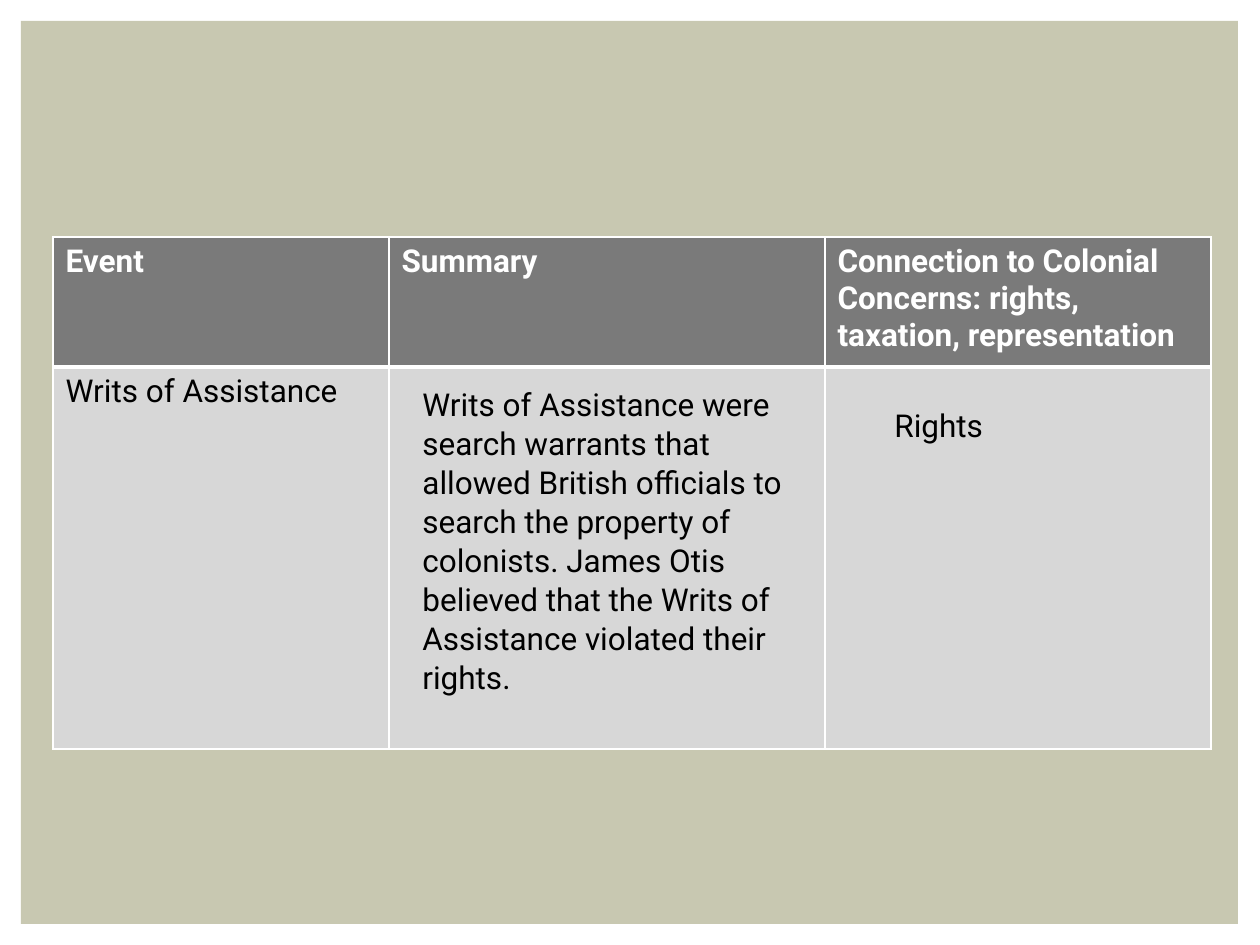
from dataclasses import dataclass

from lxml import etree
from pptx import Presentation
from pptx import util as u
from pptx.dml.color import RGBColor
from pptx.enum import shapes, text
from pptx.oxml import ns

SCALE = 914400 / 126  # EMU in one px


@dataclass(frozen=True)
class Theme:
    panel: str = "C8C8B1"
    head: str = "7A7A7A"
    body: str = "D7D7D7"
    light: str = "FFFFFF"
    dark: str = "000000"
    font: str = "Roboto"
    size: int = 18
    thin: int = 1
    thick: int = 3


@dataclass(frozen=True)
class Box:
    left: int
    top: int
    width: int
    height: int

    def emu(self) -> list[u.Emu]:
        return [px(n) for n in (self.left, self.top, self.width, self.height)]


@dataclass(frozen=True)
class Note:
    box: Box
    words: str


@dataclass(frozen=True)
class Row:
    height: int
    words: tuple[str, ...]
    fill: str
    color: str
    bold: bool
    edges: dict[str, int]


THEME = Theme()
PANEL = Box(21, 21, 1217, 903)
GRID = Box(53, 237, 1158, 512)
COLS = (336, 436, 386)
ROWS = (
    Row(130, ("Event", "Summary",
              "Connection to Colonial Concerns: rights, taxation, representation"),
        THEME.head, THEME.light, True,
        {"L": THEME.thin, "R": THEME.thin, "T": THEME.thin, "B": THEME.thick}),
    Row(382, ("Writs of Assistance", "", ""),
        THEME.body, THEME.dark, False,
        {"L": THEME.thin, "R": THEME.thin, "T": THEME.thick, "B": THEME.thin}),
)
NOTES = (
    Note(Box(410, 378, 410, 357),
         "Writs of Assistance were search warrants that allowed British officials "
         "to search the property of colonists. James Otis believed that the Writs "
         "of Assistance violated their rights."),
    Note(Box(882, 399, 262, 50), "Rights"),
)


def px(n: int) -> u.Emu:
    return u.Emu(round(n * SCALE))


def rgb(code: str) -> RGBColor:
    return RGBColor.from_string(code)


def add_run(para, words: str, color: str, bold: bool = False) -> None:
    run = para.add_run()
    run.text = words
    font = run.font
    font.name, font.size, font.bold = THEME.font, u.Pt(THEME.size), bold
    font.color.rgb = rgb(color)


def add_edge(cell, side: str, width: int) -> None:
    props = cell._tc.get_or_add_tcPr()
    line = etree.SubElement(props, ns.qn(f"a:ln{side}"), w=str(u.Pt(width)))
    fill = etree.SubElement(line, ns.qn("a:solidFill"))
    etree.SubElement(fill, ns.qn("a:srgbClr"), val=THEME.light)


def add_panel(slide, box: Box) -> None:
    panel = slide.shapes.add_shape(shapes.MSO_SHAPE.RECTANGLE, *box.emu())
    panel.shadow.inherit = False
    panel.fill.solid()
    panel.fill.fore_color.rgb = rgb(THEME.panel)
    panel.line.fill.background()


def add_grid(slide, box: Box) -> None:
    table = slide.shapes.add_table(len(ROWS), len(COLS), *box.emu()).table
    table.first_row = table.horz_banding = False
    for col, width in zip(table.columns, COLS):
        col.width = px(width)
    for line, row in zip(table.rows, ROWS):
        line.height = px(row.height)
        for cell, words in zip(line.cells, row.words):
            for side, width in row.edges.items():
                add_edge(cell, side, width)
            cell.fill.solid()
            cell.fill.fore_color.rgb = rgb(row.fill)
            if words:
                add_run(cell.text_frame.paragraphs[0], words, row.color, row.bold)


def add_note(slide, note: Note) -> None:
    frame = slide.shapes.add_textbox(*note.box.emu()).text_frame
    frame.word_wrap = True
    frame.auto_size = text.MSO_AUTO_SIZE.SHAPE_TO_FIT_TEXT
    para = frame.paragraphs[0]
    para.line_spacing = 1.03
    add_run(para, note.words, THEME.dark)


def main() -> None:
    deck = Presentation()
    deck.slide_width, deck.slide_height = px(1260), px(945)
    slide = deck.slides.add_slide(deck.slide_layouts[6])

    # Backdrop
    add_panel(slide, PANEL)

    # Event table
    add_grid(slide, GRID)

    # Answers laid over the table
    for note in NOTES:
        add_note(slide, note)

    deck.save("out.pptx")


if __name__ == "__main__":
    main()
